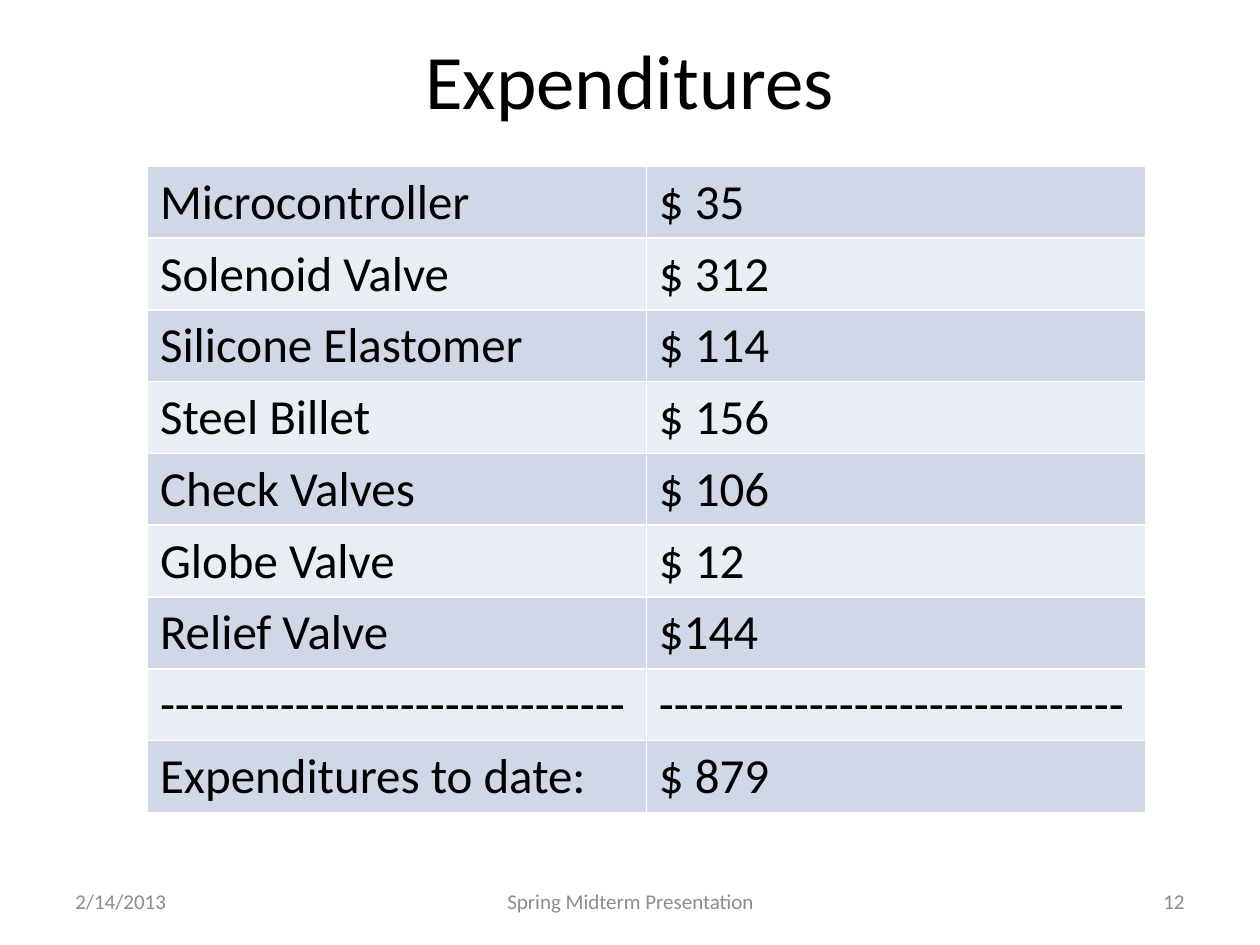
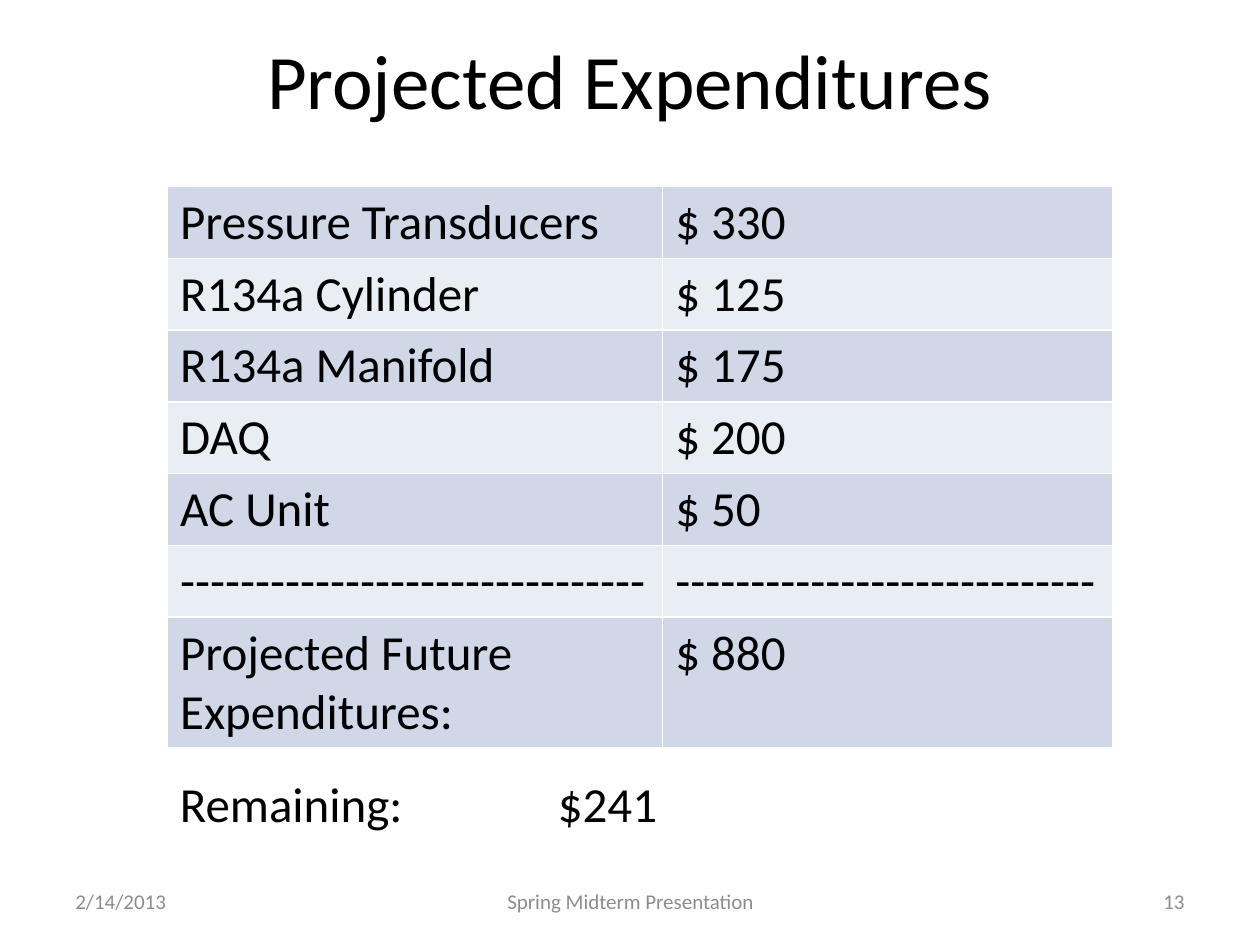
import pptx
import pptx.dml.color
import pptx.enum.text
import pptx.oxml
import pptx.oxml.ns
import pptx.util

Inches = pptx.util.Inches
ALIGN = pptx.enum.text.PP_ALIGN
ANCHOR = pptx.enum.text.MSO_ANCHOR
FONT = "Calibri"
INK, GREY, WHITE = "000000", "8C8C8C", "FFFFFF"
BANDS = ("D0D8E8", "E9EDF4")
BODY = 28
ROW = 0.57
DASH = "-" * 31

SPENT = [
    ("Microcontroller", "$ 35"),
    ("Solenoid Valve", "$ 312"),
    ("Silicone Elastomer", "$ 114"),
    ("Steel Billet", "$ 156"),
    ("Check Valves", "$ 106"),
    ("Globe Valve", "$ 12"),
    ("Relief Valve", "$144"),
    (DASH, DASH),
    ("Expenditures to date:", "$ 879"),
]
PLANNED = [
    ("Pressure Transducers", "$ 330"),
    ("R134a Cylinder", "$ 125"),
    ("R134a Manifold", "$ 175"),
    ("DAQ", "$ 200"),
    ("AC Unit", "$ 50"),
    (DASH, "-" * 28),
    ("Projected Future Expenditures:", "$ 880"),
]


def paint(hue):
    """Turn a hex string into a colour."""
    return pptx.dml.color.RGBColor.from_string(hue)


def write(frame, text, size, hue=INK, align=ALIGN.LEFT):
    """Add one styled run to the first paragraph of a frame."""
    line = frame.paragraphs[0]
    line.alignment = align
    run = line.add_run()
    run.text = text
    run.font.name = FONT
    run.font.size = pptx.util.Pt(size)
    run.font.color.rgb = paint(hue)


def label(slide, box, text, size, hue=INK, align=ALIGN.LEFT, anchor=ANCHOR.MIDDLE):
    """Add a wrapped text box at left, top, width, height."""
    frame = slide.shapes.add_textbox(*map(Inches, box)).text_frame
    frame.word_wrap = True
    frame.vertical_anchor = anchor
    write(frame, text, size, hue, align)


def edge(cell):
    """Draw thin white borders around a cell."""
    props = cell._tc.get_or_add_tcPr()
    for spot, side in enumerate(("lnL", "lnR", "lnT", "lnB")):
        props.insert(spot, pptx.oxml.parse_xml(
            f'<a:{side} {pptx.oxml.ns.nsdecls("a")} w="12700"><a:solidFill>'
            f'<a:srgbClr val="{WHITE}"/></a:solidFill></a:{side}>'))


def grid(slide, left, top, widths, items, last=ROW):
    """Add a banded cost table whose final row may be taller."""
    tall = [ROW] * (len(items) - 1) + [last]
    table = slide.shapes.add_table(
        len(items), len(widths), Inches(left), Inches(top),
        Inches(sum(widths)), Inches(sum(tall))).table
    table.first_row = False
    for col, width in zip(table.columns, widths):
        col.width = Inches(width)
    for index, (row, item) in enumerate(zip(table.rows, items)):
        row.height = Inches(tall[index])
        for cell, text in zip(row.cells, item):
            cell.fill.solid()
            cell.fill.fore_color.rgb = paint(BANDS[index % 2])
            edge(cell)
            write(cell.text_frame, text, BODY)


def page(deck, title, number):
    """Add a blank slide with its title and footer."""
    slide = deck.slides.add_slide(deck.slide_layouts[6])
    label(slide, (0, 0, 10, 1.25), title, 44, align=ALIGN.CENTER)
    for left, width, text, align in (
            (0.5, 2.33, "2/14/2013", ALIGN.LEFT),
            (3.42, 3.17, "Spring Midterm Presentation", ALIGN.CENTER),
            (7.17, 2.33, str(number), ALIGN.RIGHT)):
        label(slide, (left, 6.95, width, 0.4), text, 12, GREY, align)
    return slide


def main():
    """Build both budget slides and save them."""
    deck = pptx.Presentation()
    deck.slide_width, deck.slide_height = Inches(10), Inches(7.5)
    spent = page(deck, "Expenditures", 12)
    grid(spent, 1.17, 1.32, (3.96, 3.96), SPENT)
    plan = page(deck, "Projected Expenditures", 13)
    grid(plan, 1.33, 1.48, (3.93, 3.57), PLANNED, last=1.04)
    label(plan, (1.33, 6.09, 5.33, 0.57), "Remaining:\t\t\t$241", BODY,
          anchor=ANCHOR.TOP)
    deck.save("out.pptx")


if __name__ == "__main__":
    main()
